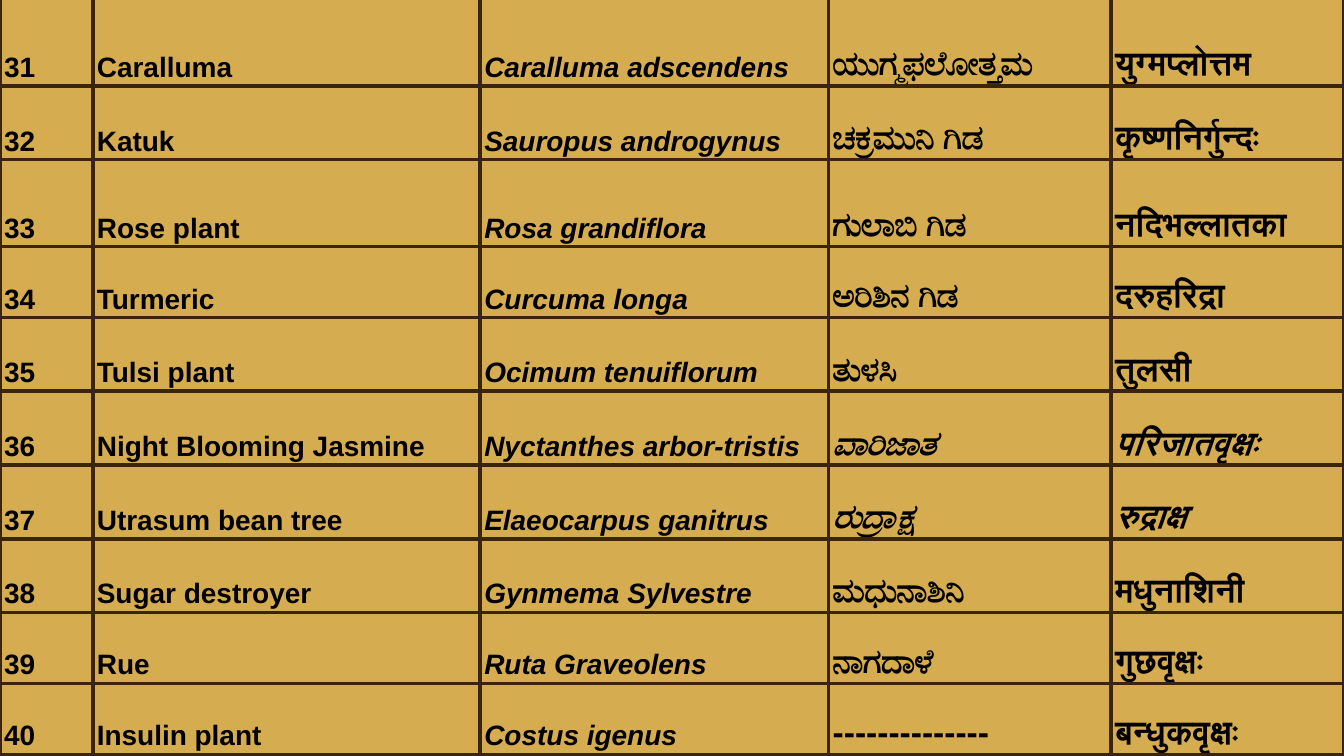
"""Build a slide with a table of medicinal plants and their names in four languages."""
from lxml.etree import SubElement
from pptx import Presentation
from pptx.dml.color import RGBColor as Color
from pptx.enum.text import MSO_ANCHOR as Anchor
from pptx.oxml import parse_xml
from pptx.oxml.ns import nsdecls, qn
from pptx.util import Inches, Pt

COLORS = {"background": "D6AC50", "border": "3A250A", "text": "000000"}
FONT = "Arial"
FIRST_NUMBER = 31
NO_NAME = "--------------"
PLANTS = [
    ("Caralluma", "Caralluma adscendens", "ಯುಗ್ಮಫಲೋತ್ತಮ", "युग्मप्लोत्तम"),
    ("Katuk", "Sauropus androgynus", "ಚಕ್ರಮುನಿ ಗಿಡ", "कृष्णनिर्गुन्दः"),
    ("Rose plant", "Rosa grandiflora", "ಗುಲಾಬಿ ಗಿಡ", "नदिभल्लातका"),
    ("Turmeric", "Curcuma longa", "ಅರಿಶಿನ ಗಿಡ", "दरुहरिद्रा"),
    ("Tulsi plant", "Ocimum tenuiflorum", "ತುಳಸಿ", "तुलसी"),
    ("Night Blooming Jasmine", "Nyctanthes arbor-tristis", "ಪಾರಿಜಾತ", "परिजातवृक्षः"),
    ("Utrasum bean tree", "Elaeocarpus ganitrus", "ರುದ್ರಾಕ್ಷ", "रुद्राक्ष"),
    ("Sugar destroyer", "Gynmema Sylvestre", "ಮಧುನಾಶಿನಿ", "मधुनाशिनी"),
    ("Rue", "Ruta Graveolens", "ನಾಗದಾಳೆ", "गुछवृक्षः"),
    ("Insulin plant", "Costus igenus", NO_NAME, "बन्धुकवृक्षः"),
]
ITALIC_NUMBERS = {36, 37}
SLIDE_WIDTH = Inches(10)
SLIDE_HEIGHT = SLIDE_WIDTH * 9 // 16
COLUMN_SHARES = [0.69, 2.88, 2.59, 2.1, 1.73]
COLUMN_SIZES = [15, 15, 15, 18, 18]
LATIN_NAME_COLUMN = 2
ROW_SHARES = [0.65, 0.55, 0.65, 0.53, 0.55, 0.55, 0.55, 0.55, 0.53, 0.53]


def split(length, shares):
    return [int(length * share / sum(shares)) for share in shares]


def add_borders(cell):
    properties = cell._tc.get_or_add_tcPr()
    for position, side in enumerate(("lnL", "lnR", "lnT", "lnB")):
        properties.insert(position, parse_xml(
            f'<a:{side} {nsdecls("a")} w="{Pt(2.25)}"><a:solidFill>'
            f'<a:srgbClr val="{COLORS["border"]}"/></a:solidFill></a:{side}>'))


def fill_cell(cell, text, size, italic):
    cell.fill.background()
    cell.vertical_anchor = Anchor.BOTTOM
    cell.margin_left = cell.margin_right = Inches(0.03)
    cell.margin_top = cell.margin_bottom = Inches(0.02)
    add_borders(cell)
    paragraph = cell.text_frame.paragraphs[0]
    paragraph.line_spacing = 1 if text == NO_NAME else 1.15
    run = paragraph.add_run()
    run.text = text
    font = run.font
    font.name, font.size, font.bold, font.italic = FONT, Pt(size), True, italic
    font.color.rgb = Color.from_string(COLORS["text"])
    SubElement(run._r.get_or_add_rPr(), qn("a:cs"), typeface=FONT)


def main():
    presentation = Presentation()
    presentation.slide_width, presentation.slide_height = SLIDE_WIDTH, SLIDE_HEIGHT
    slide = presentation.slides.add_slide(presentation.slide_layouts[6])
    slide.background.fill.solid()
    slide.background.fill.fore_color.rgb = Color.from_string(COLORS["background"])

    table = slide.shapes.add_table(
        len(PLANTS), len(COLUMN_SHARES), 0, Inches(-0.01),
        SLIDE_WIDTH, SLIDE_HEIGHT).table
    table.first_row = table.horz_banding = False
    for column, width in zip(table.columns, split(SLIDE_WIDTH, COLUMN_SHARES)):
        column.width = width
    for row, height in zip(table.rows, split(SLIDE_HEIGHT, ROW_SHARES)):
        row.height = height

    for row, names in enumerate(PLANTS):
        number = FIRST_NUMBER + row
        for column, text in enumerate((str(number), *names)):
            italic = column == LATIN_NAME_COLUMN or (
                column > LATIN_NAME_COLUMN and number in ITALIC_NUMBERS)
            fill_cell(table.cell(row, column), text, COLUMN_SIZES[column], italic)

    presentation.save("out.pptx")


if __name__ == "__main__":
    main()
